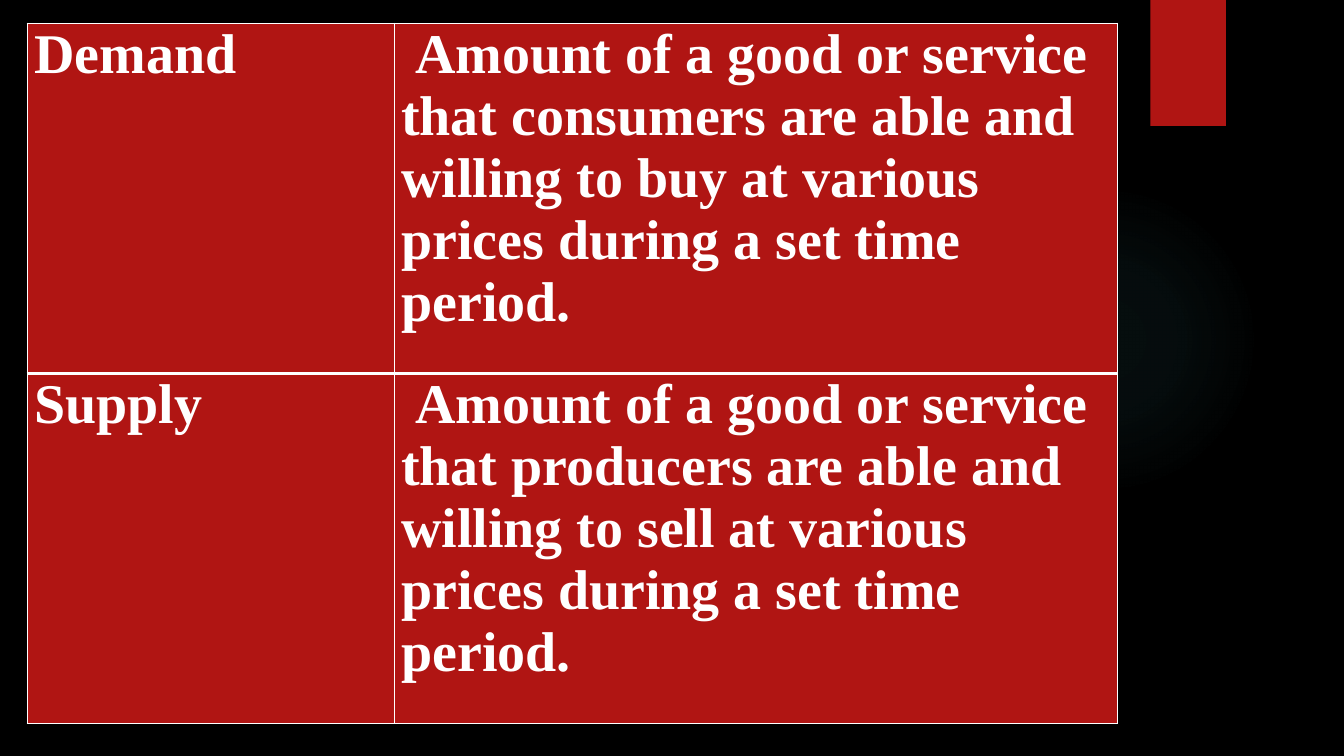
from pptx import Presentation
from pptx.dml.color import RGBColor
from pptx.enum.shapes import MSO_SHAPE
from pptx.oxml import parse_xml
from pptx.oxml.ns import nsdecls, qn
from pptx.util import Inches, Pt

OVAL, RECTANGLE = MSO_SHAPE.OVAL, MSO_SHAPE.RECTANGLE
BLACK, WHITE, RED, TEAL = "000000", "FFFFFF", "B01513", "50B9C1"
TERM_FORMAT = {"name": "Times New Roman", "size": Pt(40), "bold": True}
CELL_MARGINS = {"margin_left": Inches(0.07), "margin_right": Inches(0.07),
                "margin_top": 0, "margin_bottom": 0}
GLOW_STOPS = [(0, 7), (36, 6), (69, 0)]
DEFINITIONS = [
    ("Demand", "Amount of a good or service that consumers are able and "
               "willing to buy at various prices during a set time period."),
    ("Supply", "Amount of a good or service that producers are able and "
               "willing to sell at various prices during a set time period."),
]


def paint(fill, color):
    """Give a fill one solid colour."""
    fill.solid()
    fill.fore_color.rgb = RGBColor.from_string(color)


def set_format(target, values):
    """Set each named attribute on the target."""
    for name, value in values.items():
        setattr(target, name, value)


def add_plain_shape(slide, kind, box, color):
    """Add a borderless shape of one colour without a shadow."""
    shape = slide.shapes.add_shape(kind, *map(Inches, box))
    shape.shadow.inherit = False
    shape.line.fill.background()
    paint(shape.fill, color)
    return shape


def add_glow(slide, box):
    """Add the faint round glow behind the table."""
    glow = add_plain_shape(slide, OVAL, box, TEAL)
    stops = "".join(
        f'<a:gs pos="{pos * 1000}"><a:srgbClr val="{TEAL}">'
        f'<a:alpha val="{alpha * 1000}"/></a:srgbClr></a:gs>'
        for pos, alpha in GLOW_STOPS)
    gradient = parse_xml(
        f'<a:gradFill {nsdecls("a")}><a:gsLst>{stops}</a:gsLst><a:path path="circle">'
        '<a:fillToRect l="50000" t="50000" r="50000" b="50000"/></a:path></a:gradFill>')
    properties = glow.element.spPr
    properties.replace(properties.find(qn("a:solidFill")), gradient)


def add_ribbon(slide, box):
    """Add the red ribbon with its soft shadow at the top edge."""
    ribbon = add_plain_shape(slide, RECTANGLE, box, RED)
    ribbon.element.spPr.find(qn("a:effectLst")).append(parse_xml(
        f'<a:outerShdw {nsdecls("a")} blurRad="{Pt(3)}" dist="{Pt(2)}" dir="5400000">'
        f'<a:srgbClr val="{BLACK}"><a:alpha val="45000"/></a:srgbClr></a:outerShdw>'))


def set_borders(cell, widths):
    """Draw white cell borders, given a width in points for each side."""
    properties = cell._tc.get_or_add_tcPr()
    for position, (side, width) in enumerate(widths.items()):
        properties.insert(position, parse_xml(
            f'<a:ln{side} {nsdecls("a")} w="{Pt(width)}"><a:solidFill>'
            f'<a:srgbClr val="{WHITE}"/></a:solidFill></a:ln{side}>'))


def fill_cell(cell, wording, indent):
    """Write one formatted paragraph into a red cell."""
    paint(cell.fill, RED)
    set_format(cell, CELL_MARGINS)
    cell.text = wording
    paragraph = cell.text_frame.paragraphs[0]
    paragraph._p.get_or_add_pPr().set("indent", str(Inches(indent)))
    font = paragraph.runs[0].font
    set_format(font, TERM_FORMAT)
    font.color.rgb = RGBColor.from_string(WHITE)


def add_definitions(slide, box):
    """Add the table of terms and their meanings."""
    left, top, width, height = map(Inches, box)
    table = slide.shapes.add_table(len(DEFINITIONS), 2, left, top, width, height).table
    term_width = Inches(3.64)
    table.columns[0].width = term_width
    table.columns[1].width = width - term_width
    last = len(DEFINITIONS) - 1
    for index, definition in enumerate(DEFINITIONS):
        widths = {"L": 1, "R": 1, "T": 3 if index else 1, "B": 3 if index < last else 1}
        for column, (wording, indent) in enumerate(zip(definition, (0, 0.14))):
            cell = table.cell(index, column)
            fill_cell(cell, wording, indent)
            set_borders(cell, widths)


def main():
    """Build the slide and save it."""
    deck = Presentation()
    set_format(deck, {"slide_width": Inches(13.33), "slide_height": Inches(7.5)})
    slide = deck.slides.add_slide(deck.slide_layouts[6])
    paint(slide.background.fill, BLACK)
    add_glow(slide, (9.41, 1.83, 3.08, 3.08))
    add_ribbon(slide, (11.41, 0, 0.75, 1.25))
    add_definitions(slide, (0.27, 0.23, 10.81, 6.95))
    deck.save("out.pptx")


if __name__ == "__main__":
    main()
